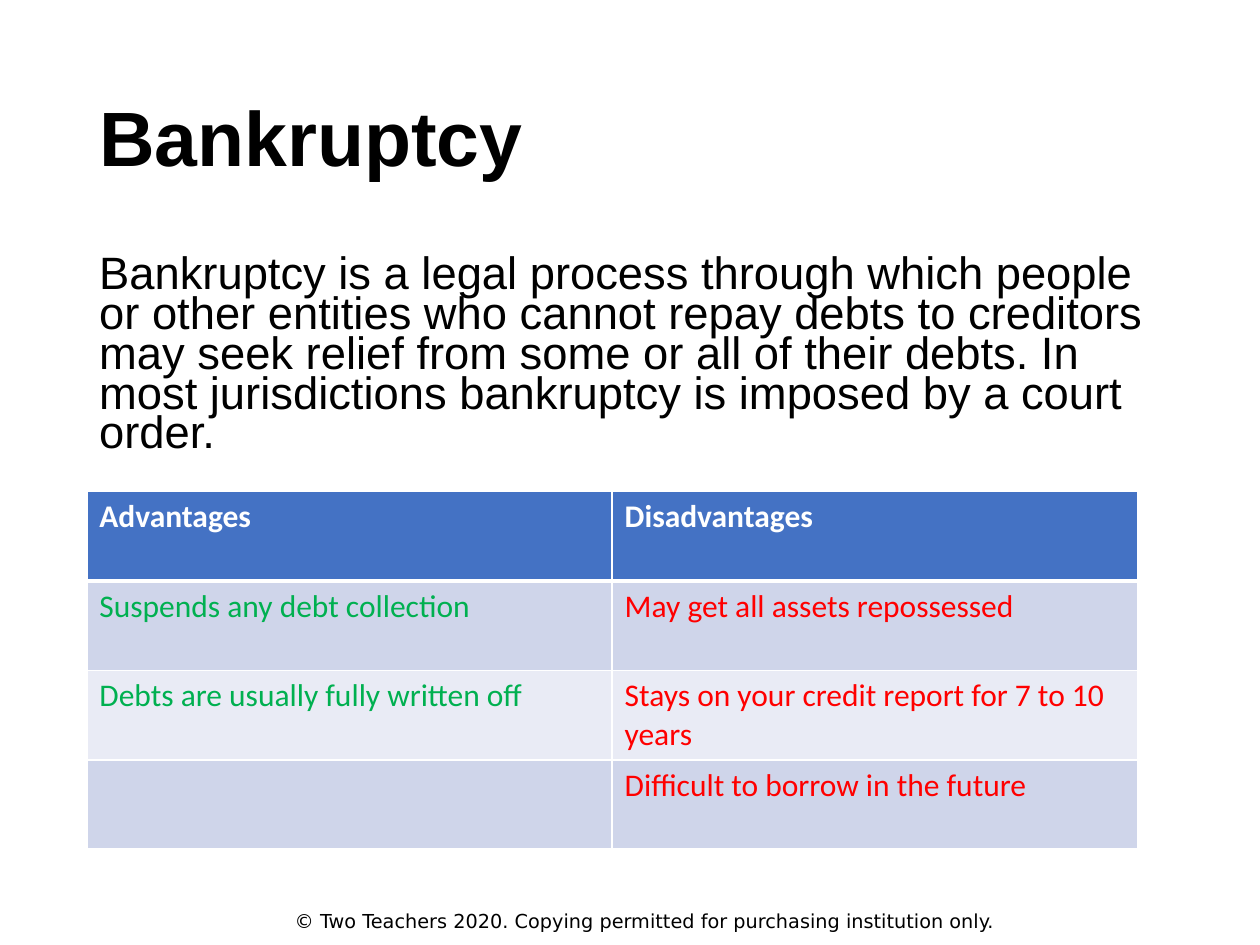
import lxml.etree
import pptx
import pptx.dml.color
import pptx.enum.text
import pptx.oxml.ns
import pptx.util

Cm = pptx.util.Cm
Pt = pptx.util.Pt
RGBColor = pptx.dml.color.RGBColor
ANCHOR = pptx.enum.text.MSO_ANCHOR

BLACK = RGBColor(0x00, 0x00, 0x00)
WHITE = RGBColor(0xFF, 0xFF, 0xFF)
GREEN = RGBColor(0x00, 0xB0, 0x50)
RED = RGBColor(0xFF, 0x00, 0x00)
HEADER_BLUE = RGBColor(0x44, 0x72, 0xC4)
BAND_DARK = RGBColor(0xCF, 0xD5, 0xEA)
BAND_LIGHT = RGBColor(0xE9, 0xEB, 0xF5)

TITLE = "Bankruptcy"
DEFINITION = (
    "Bankruptcy is a legal process through which people or other entities "
    "who cannot repay debts to creditors may seek relief from some or all of "
    "their debts. In most jurisdictions bankruptcy is imposed by a court order."
)
COPYRIGHT = "© Two Teachers 2020. Copying permitted for purchasing institution only."
COMPARISON = [
    ("Advantages", "Disadvantages"),
    ("Suspends any debt collection", "May get all assets repossessed"),
    ("Debts are usually fully written off",
     "Stays on your credit report for 7 to 10 years"),
    ("", "Difficult to borrow in the future"),
]


def add_run(paragraph, text, font_name, size, color, bold=False):
    run = paragraph.add_run()
    run.text = text
    run.font.name = font_name
    run.font.size = Pt(size)
    run.font.bold = bold
    run.font.color.rgb = color


def add_text(slide, box, text, font_name, size, anchor=ANCHOR.TOP,
             bold=False, line_spacing=1.0):
    """Place one black paragraph in the box (left, top, width, height)."""
    shape = slide.shapes.add_textbox(*box)
    frame = shape.text_frame
    frame.word_wrap = True
    frame.vertical_anchor = anchor
    paragraph = frame.paragraphs[0]
    paragraph.line_spacing = line_spacing
    add_run(paragraph, text, font_name, size, BLACK, bold)


def add_cell_borders(cell, widths):
    """Draw white borders; widths maps L, R, T, B to points."""
    properties = cell._tc.get_or_add_tcPr()
    qn = pptx.oxml.ns.qn
    for side, width in widths.items():
        line = lxml.etree.SubElement(properties, qn("a:ln" + side),
                                     w=str(int(Pt(width))))
        fill = lxml.etree.SubElement(line, qn("a:solidFill"))
        lxml.etree.SubElement(fill, qn("a:srgbClr"), val=str(WHITE))


def add_comparison_table(slide, box, rows):
    left, top, width, height = box
    column_count = len(rows[0])
    table = slide.shapes.add_table(len(rows), column_count, *box).table
    for column in table.columns:
        column.width = width // column_count
    for row in table.rows:
        row.height = height // len(rows)

    for row_index, texts in enumerate(rows):
        is_header = row_index == 0
        if is_header:
            fill_color, text_colors = HEADER_BLUE, (WHITE, WHITE)
        else:
            fill_color = BAND_DARK if row_index % 2 else BAND_LIGHT
            text_colors = (GREEN, RED)
        # The rule under the header is thicker than the others
        widths = {"L": 1, "R": 1, "T": 3 if row_index == 1 else 1,
                  "B": 3 if is_header else 1}
        for column_index, text in enumerate(texts):
            cell = table.cell(row_index, column_index)
            add_cell_borders(cell, widths)
            cell.fill.solid()
            cell.fill.fore_color.rgb = fill_color
            if text:
                add_run(cell.text_frame.paragraphs[0], text, "Calibri", 18,
                        text_colors[column_index], is_header)


def main():
    presentation = pptx.Presentation()
    presentation.slide_width = Cm(25.4)
    presentation.slide_height = Cm(19.05)
    slide = presentation.slides.add_slide(presentation.slide_layouts[6])
    margin, text_width = Cm(1.75), Cm(21.9)

    # Copyright footer
    add_text(slide, (Cm(5.69), Cm(18.16), Cm(17), Cm(0.79)), COPYRIGHT,
             "DejaVu Sans", 11, ANCHOR.MIDDLE)
    # Title
    add_text(slide, (margin, Cm(1.02), text_width, Cm(3.68)), TITLE,
             "Arial", 44, ANCHOR.MIDDLE, bold=True, line_spacing=0.9)
    # Definition
    add_text(slide, (margin, Cm(5.08), text_width, Cm(4.45)), DEFINITION,
             "Arial", 25.9, line_spacing=0.73)
    # Advantages and disadvantages
    add_comparison_table(slide, (margin, Cm(9.91), Cm(21.18), Cm(7.21)),
                         COMPARISON)

    presentation.save("out.pptx")


if __name__ == "__main__":
    main()
